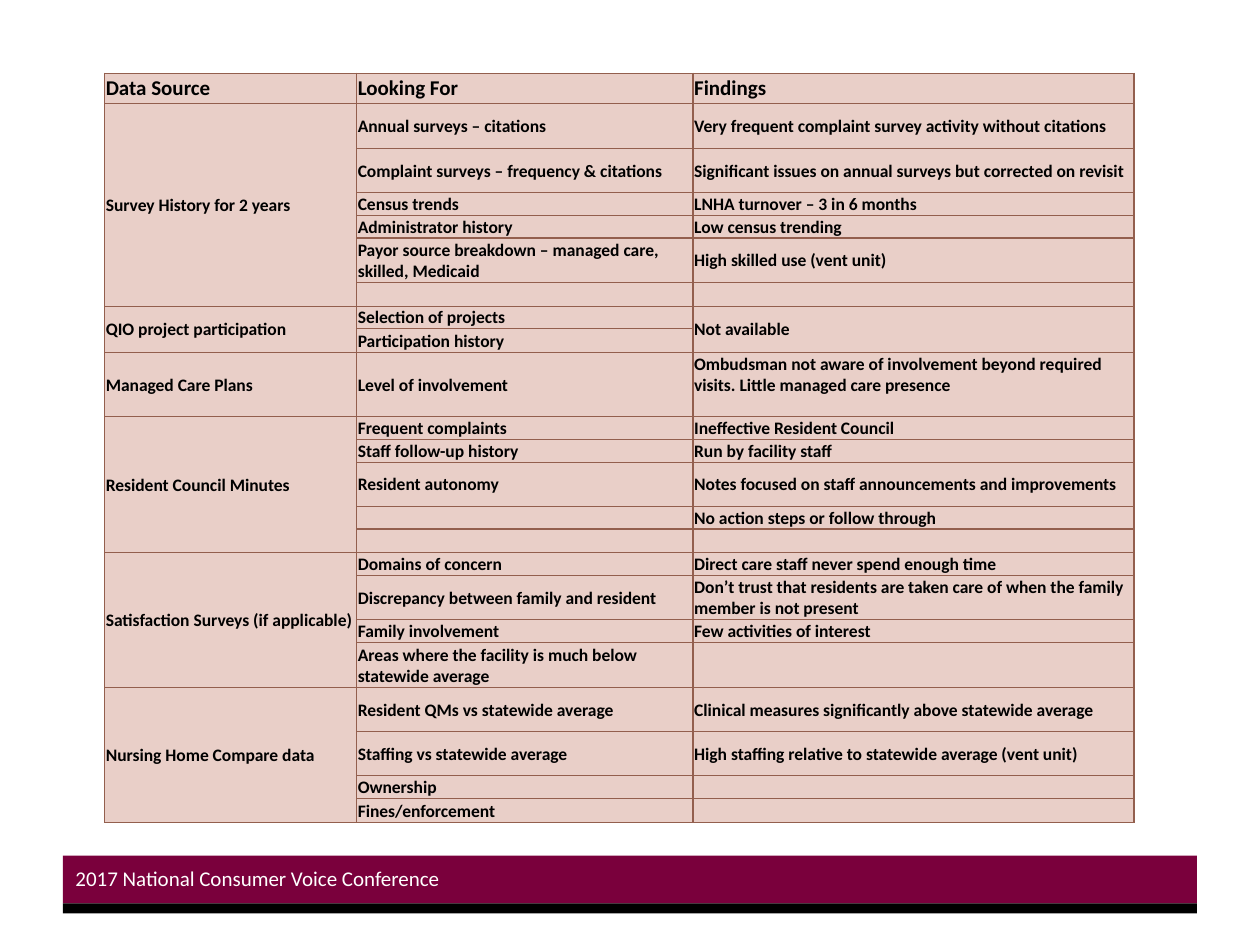
from lxml import etree
from pptx import Presentation
from pptx.dml.color import RGBColor
from pptx.enum.shapes import MSO_SHAPE
from pptx.enum.text import MSO_ANCHOR
from pptx.oxml.ns import qn
from pptx.util import Inches, Pt

RECTANGLE = MSO_SHAPE.RECTANGLE
MIDDLE = MSO_ANCHOR.MIDDLE
TOP = MSO_ANCHOR.TOP

COLUMN_WIDTHS = [2, 2.67, 3.5]
HEADINGS = ["Data Source", "Looking For", "Findings"]
SOURCES = [
    ("Survey History for 2 years", [
        (0.36, "Annual surveys – citations", "Very frequent complaint survey activity without citations"),
        (0.35, "Complaint surveys – frequency & citations",
         "Significant issues on annual surveys but corrected on revisit"),
        (0.18, "Census trends", "LNHA turnover – 3 in 6 months"),
        (0.18, "Administrator history", "Low census trending"),
        (0.35, "Payor source breakdown – managed care, skilled, Medicaid", "High skilled use (vent unit)"),
        (0.19, "", ""),
    ]),
    ("QIO project participation", [
        (0.18, "Selection of projects", "Not available"),
        (0.19, "Participation history", None),
    ]),
    ("Managed Care Plans", [
        (0.51, "Level of involvement",
         "Ombudsman not aware of involvement beyond required visits. Little managed care presence"),
    ]),
    ("Resident Council Minutes", [
        (0.18, "Frequent complaints", "Ineffective Resident Council"),
        (0.18, "Staff follow-up history", "Run by facility staff"),
        (0.35, "Resident autonomy", "Notes focused on staff announcements and improvements"),
        (0.18, "", "No action steps or follow through"),
        (0.19, "", ""),
    ]),
    ("Satisfaction Surveys (if applicable)", [
        (0.18, "Domains of concern", "Direct care staff never spend enough time"),
        (0.35, "Discrepancy between family and resident",
         "Don’t trust that residents are taken care of when the family member is not present"),
        (0.18, "Family involvement", "Few activities of interest"),
        (0.36, "Areas where the facility is much below statewide average", ""),
    ]),
    ("Nursing Home Compare data", [
        (0.35, "Resident QMs vs statewide average", "Clinical measures significantly above statewide average"),
        (0.35, "Staffing vs statewide average", "High staffing relative to statewide average (vent unit)"),
        (0.18, "Ownership", ""),
        (0.19, "Fines/enforcement", ""),
    ]),
]


def color(value):
    return RGBColor.from_string(value)


def write(frame, text, size=10, fill="000000", bold=False, font="Calibri"):
    paragraph = frame.paragraphs[0]
    if not text:
        end = etree.SubElement(paragraph._p, qn("a:endParaRPr"))
        end.set("sz", str(size * 100))
        return
    run = paragraph.add_run()
    run.text = text
    run.font.name = font
    run.font.size = Pt(size)
    run.font.bold = bold
    run.font.color.rgb = color(fill)


def add_borders(cell, line_color, width):
    properties = cell._tc.get_or_add_tcPr()
    for index, side in enumerate(("lnL", "lnR", "lnT", "lnB")):
        line = etree.Element(qn(f"a:{side}"), w=str(Pt(width)))
        solid = etree.SubElement(line, qn("a:solidFill"))
        etree.SubElement(solid, qn("a:srgbClr"), val=line_color)
        properties.insert(index, line)


def table_rows():
    rows = [(0.24, HEADINGS)]
    for source, details in SOURCES:
        for index, (height, sought, finding) in enumerate(details):
            rows.append((height, [None if index else source, sought, finding]))
    return rows


class SlideBuilder:
    cell_fill = "E9CFC8"
    border = "935F4E"

    def __init__(self, slide):
        self.slide = slide

    def band(self, left, top, width, height, fill):
        bar = self.slide.shapes.add_shape(
            RECTANGLE, Inches(left), Inches(top), Inches(width), Inches(height))
        bar.shadow.inherit = False
        bar.fill.solid()
        bar.fill.fore_color.rgb = color(fill)
        bar.line.fill.background()

    def label(self, left, top, width, height, text, **style):
        box = self.slide.shapes.add_textbox(
            Inches(left), Inches(top), Inches(width), Inches(height))
        box.text_frame.word_wrap = True
        box.text_frame.vertical_anchor = MIDDLE
        write(box.text_frame, text, **style)

    def table(self, left, top, widths, rows):
        total = sum(height for height, _ in rows)
        table = self.slide.shapes.add_table(
            len(rows), len(widths), Inches(left), Inches(top),
            Inches(sum(widths)), Inches(total)).table
        for column, width in zip(table.columns, widths):
            column.width = Inches(width)
        for row_index, (height, texts) in enumerate(rows):
            table.rows[row_index].height = Inches(height)
            for column_index, text in enumerate(texts):
                self.cell(table.cell(row_index, column_index), text, 10 if row_index else 12)
        for column_index in range(len(widths)):
            self.merge_column(table, column_index, [texts[column_index] for _, texts in rows])
        return table

    def cell(self, cell, text, size):
        cell.margin_left = cell.margin_right = cell.margin_top = Inches(0.01)
        cell.margin_bottom = 0
        cell.vertical_anchor = MIDDLE
        cell.fill.solid()
        cell.fill.fore_color.rgb = color(self.cell_fill)
        add_borders(cell, self.border, 0.75)
        write(cell.text_frame, text, size=size, bold=True)

    def merge_column(self, table, column, texts):
        starts = [row for row, text in enumerate(texts) if text is not None]
        for start, following in zip(starts, starts[1:] + [len(texts)]):
            if following - start > 1:
                table.cell(start, column).merge(table.cell(following - 1, column))


def main():
    deck = Presentation()
    deck.slide_width = Inches(10)
    deck.slide_height = Inches(7.5)
    builder = SlideBuilder(deck.slides.add_slide(deck.slide_layouts[6]))
    builder.band(0.5, 6.79, 9, 0.38, "7A003C")
    builder.band(0.5, 7.17, 9, 0.08, "000000")
    builder.label(0.5, 6.77, 3.25, 0.4, "2017 National Consumer Voice Conference", size=12, fill="FFFFFF")
    rows = table_rows()
    findings = builder.table(0.83, 0.58, COLUMN_WIDTHS, rows)
    managed_care = [texts[0] for _, texts in rows].index("Managed Care Plans")
    findings.cell(managed_care, 2).vertical_anchor = TOP
    deck.save("out.pptx")


if __name__ == "__main__":
    main()
